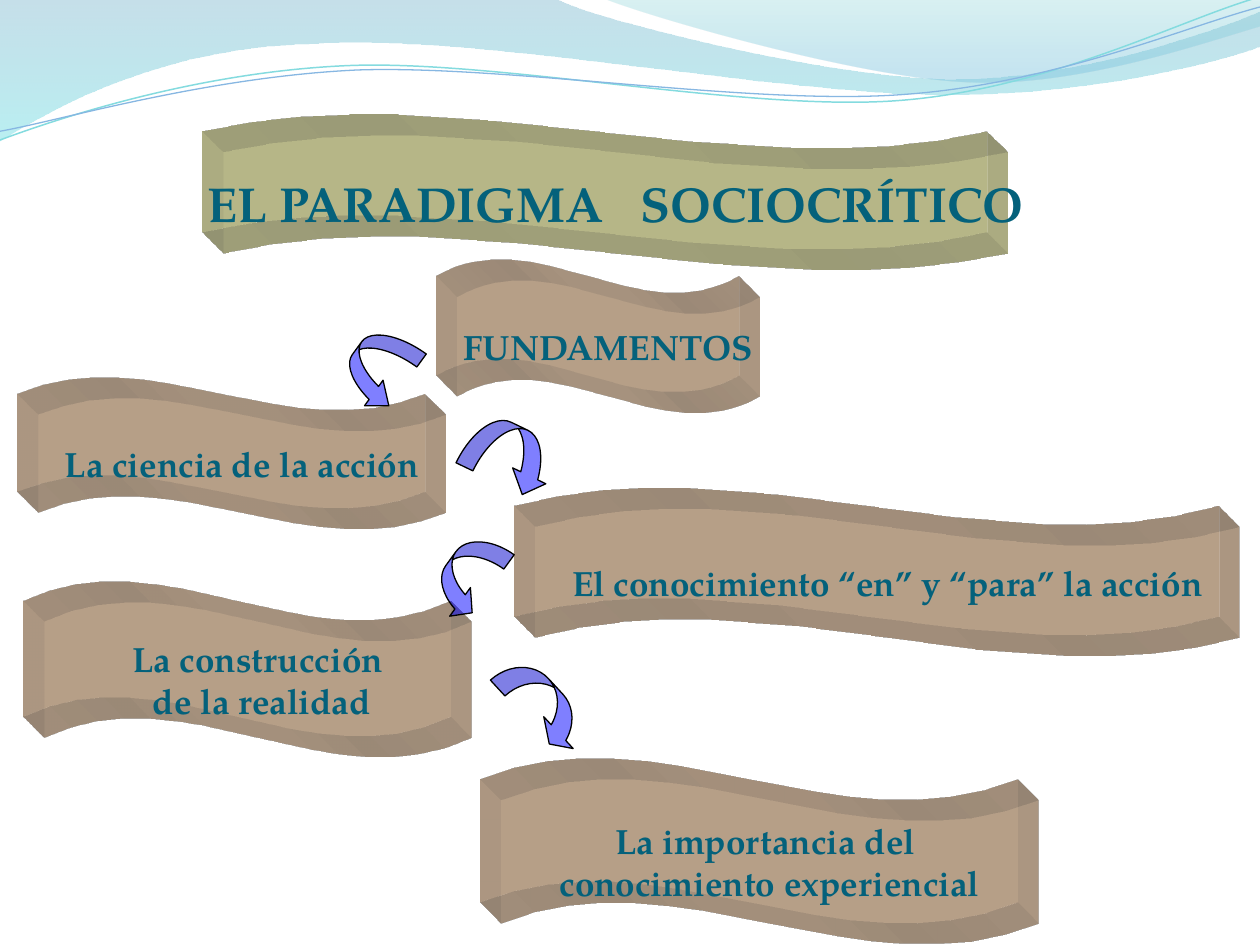
from dataclasses import dataclass

from lxml.etree import SubElement
from pptx import Presentation
from pptx.dml.color import RGBColor
from pptx.enum.shapes import MSO_SHAPE as Preset
from pptx.enum.text import MSO_ANCHOR as Anchor, MSO_AUTO_SIZE as AutoSize, PP_ALIGN as Align
from pptx.oxml import parse_xml
from pptx.oxml.ns import nsdecls, qn
from pptx.util import Pt

WHITE = RGBColor(0xFF, 0xFF, 0xFF)
BLACK = RGBColor(0, 0, 0)
INK = RGBColor(0x04, 0x61, 0x7B)
YELLOW = RGBColor(0xFF, 0xFF, 0x99)
PEACH = RGBColor(0xFF, 0xCC, 0x99)
BLUE = RGBColor(0, 0, 0xFF)
DEEP_BLUE = RGBColor(0, 0x74, 0xA1)
AQUA = RGBColor(0, 0xC6, 0xCF)
TEAL = RGBColor(0, 0xA1, 0xA9)
SEA_BLUE = RGBColor(0, 0x8B, 0xBF)
TURQUOISE = RGBColor(0x0A, 0xB8, 0xBF)
SKY_BLUE = RGBColor(0x0F, 0x6F, 0xC6)

FONT = {"name": "TeX Gyre Pagella", "bold": True}
FRAME = {"word_wrap": False, "auto_size": AutoSize.NONE, "vertical_anchor": Anchor.MIDDLE}
EXTRUSION_DEPTH = Pt(33.87)


@dataclass
class Curve:
    """A start point, then segments: one point is a line, three are a Bezier."""
    start: tuple
    segments: list


@dataclass
class Banner:
    box: tuple
    color: RGBColor
    lines: tuple
    size: float = 20


@dataclass
class Arrow:
    preset: Preset
    box: tuple
    rotation: float
    adjustments: tuple
    flipped: bool = False


SWOOSHES = [
    (Curve((0, 0), [
        [(317, -1)],
        [(343, 12), (478, 45), (546, 45)],
        [(614, 45), (690, 19), (720, 6.5)],
        [(721, 26)],
        [(708, 32), (626, 55), (537, 54)],
        [(446, 54), (275, 20), (185, 24.5)],
        [(93, 26), (33, 60), (-1, 81)]]),
     [(0, DEEP_BLUE, 45), (1, AQUA, 55)]),
    (Curve((345, -1), [
        [(366, 8), (491, 45), (554, 47)],
        [(616, 50), (692, 23), (720, 15)],
        [(720, 0)]]),
     [(0, TEAL, 30), (0.8, SEA_BLUE, 45)]),
]

STRANDS = [
    (Curve((0, 80), [
        [(35, 67), (114, 41), (199, 37.5)],
        [(284, 34), (427, 64), (513, 57.5)],
        [(600, 51), (675, 11), (719, -1.5)]]), TURQUOISE, 0.85),
    (Curve((0, 75), [
        [(34, 69), (118, 44), (204, 40)],
        [(290, 37), (430, 60.5), (516, 54)],
        [(602, 48), (678, 15), (720, 4)]]), SKY_BLUE, 0.75),
]

TITLE_BANNER = Banner((127.5, 77, 448, 77.75), YELLOW, ("EL PARADIGMA",), 28)
BANNERS = [
    Banner((261.25, 159.75, 172.75, 76.25), PEACH, ("FUNDAMENTOS",)),
    Banner((306, 290.25, 402.5, 85), PEACH, ("El conocimiento “en” y “para” la acción",)),
    Banner((22, 227, 232.5, 75.5), PEACH, ("La ciencia de la acción",)),
    Banner((286.5, 445, 306.75, 95), PEACH, ("La importancia del ", "conocimiento experiencial")),
    Banner((25.25, 343.75, 244, 89.25), PEACH, ("La construcción", " de la realidad")),
]

RIGHT, LEFT = Preset.CURVED_RIGHT_ARROW, Preset.CURVED_LEFT_ARROW
ARROWS = [
    Arrow(RIGHT, (199.5, 188, 34, 45.5), 35.9, (0.27, 0.53, 0.33)),
    Arrow(RIGHT, (298, 372, 25, 62), 317.3, (0.49, 0.99, 0.33), flipped=True),
    Arrow(RIGHT, (253.5, 304, 28, 51), 35.9, (0.36, 0.72, 0.33)),
    Arrow(LEFT, (274.5, 234, 34.5, 52.5), 295.6, (0.31, 0.61, 0.33)),
]


def set_all(target, values: dict) -> None:
    for name, value in values.items():
        setattr(target, name, value)


def set_alpha(color_element, percent: float) -> None:
    SubElement(color_element, qn("a:alpha")).set("val", str(int(percent * 1000)))


def add_outline(slide, curve: Curve, close: bool):
    """Draw through all points, then join each three-point segment into a Bezier."""
    points = [point for segment in curve.segments for point in segment]
    builder = slide.shapes.build_freeform(*map(Pt, curve.start))
    builder.add_line_segments([(Pt(x), Pt(y)) for x, y in points], close=close)
    shape = builder.convert_to_shape()
    shape.shadow.inherit = False
    steps = iter(list(shape.element.spPr.iter(qn("a:lnTo"))))
    for segment in curve.segments:
        lines = [next(steps) for _ in segment]
        if len(lines) == 3:
            bezier = lines[0].makeelement(qn("a:cubicBezTo"))
            lines[0].addprevious(bezier)
            for line in lines:
                bezier.append(line[0])
                line.getparent().remove(line)
    return shape


def add_swoosh(slide, curve: Curve, stops: list) -> None:
    shape = add_outline(slide, curve, close=True)
    shape.line.fill.background()
    shape.fill.gradient()
    shape.fill.gradient_angle = 270
    for stop, (position, color, opacity) in zip(shape.fill.gradient_stops, stops):
        stop.position = position
        stop.color.rgb = color
    for element, stop in zip(shape.element.spPr.iter(qn("a:srgbClr")), stops):
        set_alpha(element, stop[2])


def add_strand(slide, curve: Curve, color: RGBColor, width: float) -> None:
    shape = add_outline(slide, curve, close=False)
    shape.fill.background()
    shape.line.color.rgb = color
    shape.line.width = Pt(width)


def add_veiled_shape(slide, preset: Preset, box: tuple, color: RGBColor):
    """Add a borderless preset shape with a half-transparent fill."""
    shape = slide.shapes.add_shape(preset, *map(Pt, box))
    shape.shadow.inherit = False
    shape.fill.solid()
    shape.fill.fore_color.rgb = color
    set_alpha(next(shape.element.spPr.iter(qn("a:srgbClr"))), 50)
    shape.line.fill.background()
    return shape


def write_lines(shape, lines: tuple, size: float) -> None:
    set_all(shape.text_frame, FRAME)
    shape.text_frame.text = "\n".join(lines)
    for paragraph in shape.text_frame.paragraphs:
        paragraph.alignment = Align.CENTER
        for run in paragraph.runs:
            style_run(run, size)


def style_run(run, size: float) -> None:
    set_all(run.font, {**FONT, "size": Pt(size)})
    run.font.color.rgb = INK


def add_banner(slide, banner: Banner):
    shape = add_veiled_shape(slide, Preset.WAVE, banner.box, banner.color)
    shape.adjustments[0], shape.adjustments[1] = 0.13, 0
    for xml in (
        f'<a:scene3d {nsdecls("a")}><a:camera prst="legacyObliqueTopLeft"/>'
        '<a:lightRig rig="legacyNormal3" dir="b"/></a:scene3d>',
        f'<a:sp3d {nsdecls("a")} extrusionH="{EXTRUSION_DEPTH}" prstMaterial="legacyMatte">'
        '<a:bevelT w="13500" h="13500" prst="angle"/><a:bevelB w="13500" h="13500" prst="angle"/>'
        f'<a:extrusionClr><a:srgbClr val="{banner.color}"/></a:extrusionClr></a:sp3d>',
    ):
        shape.element.spPr.append(parse_xml(xml))
    write_lines(shape, banner.lines, banner.size)
    return shape


def add_title_banner(slide, banner: Banner) -> None:
    paragraph = add_banner(slide, banner).text_frame.paragraphs[0]
    for text in (" ", "SOCIOCRÍTICO"):
        run = paragraph.add_run()
        run.text = text
        style_run(run, banner.size)
    # Widen the gap between the two words by 14 pt
    paragraph.runs[1]._r.get_or_add_rPr().set("spc", "1400")


def add_arrow(slide, arrow: Arrow) -> None:
    shape = add_veiled_shape(slide, arrow.preset, arrow.box, BLUE)
    shape.line.color.rgb = BLACK
    shape.line.width = Pt(0.75)
    shape.rotation = arrow.rotation
    for index, value in enumerate(arrow.adjustments):
        shape.adjustments[index] = value
    if arrow.flipped:
        shape.element.spPr.find(qn("a:xfrm")).set("flipH", "1")


def main() -> None:
    presentation = Presentation()
    presentation.slide_width, presentation.slide_height = Pt(720), Pt(540)
    slide = presentation.slides.add_slide(presentation.slide_layouts[6])

    # Waves along the top, softened by a white veil
    for curve, stops in SWOOSHES:
        add_swoosh(slide, curve, stops)
    for curve, color, width in STRANDS:
        add_strand(slide, curve, color, width)
    add_veiled_shape(slide, Preset.RECTANGLE, (0, 0, 720, 540), WHITE)

    # Banners and the arrows that link them
    add_title_banner(slide, TITLE_BANNER)
    for banner in BANNERS:
        add_banner(slide, banner)
    for arrow in ARROWS:
        add_arrow(slide, arrow)
    presentation.save("out.pptx")


if __name__ == "__main__":
    main()
